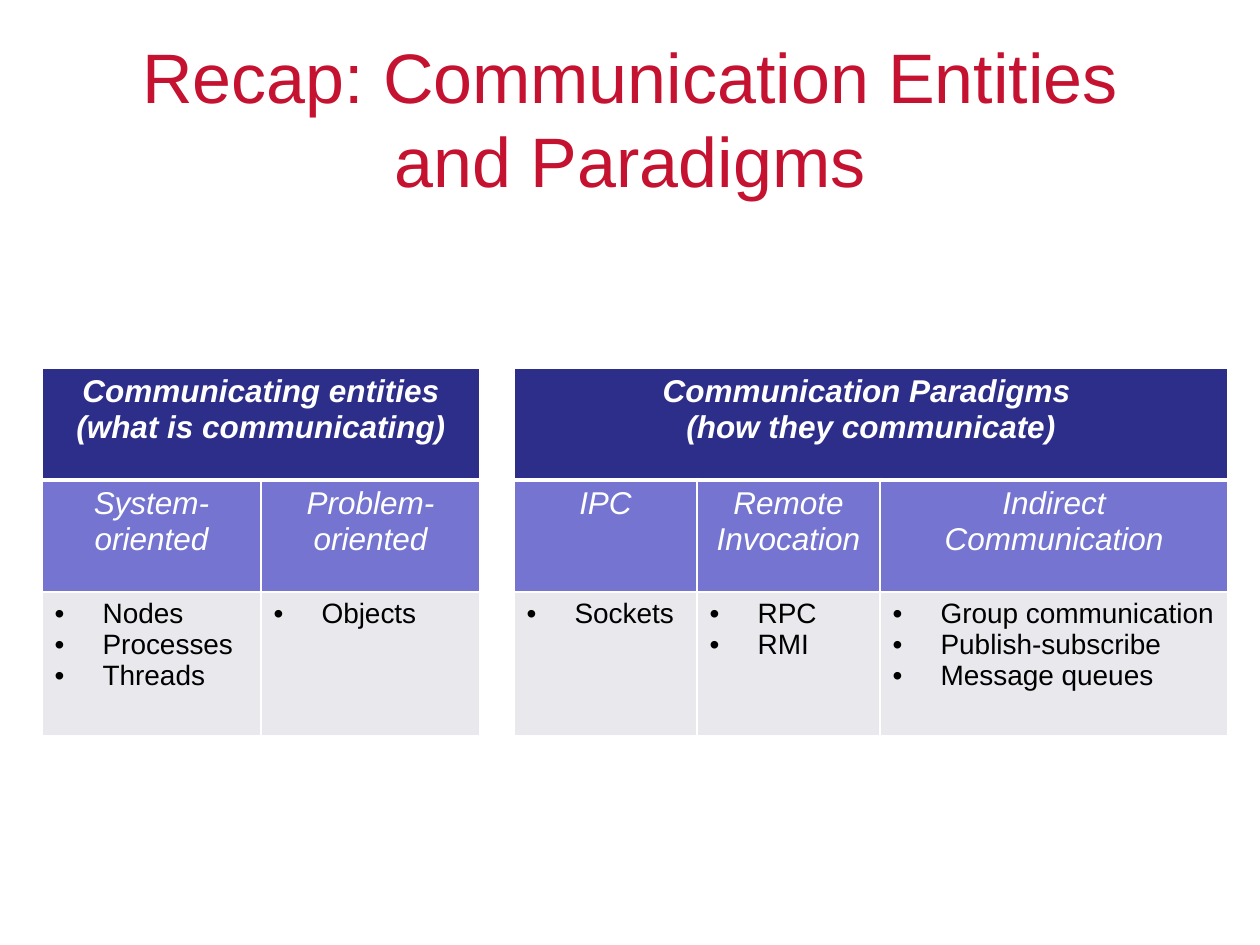
from lxml import etree
from pptx import Presentation, util as u
from pptx.dml.color import RGBColor
from pptx.enum import text
from pptx.oxml import ns

SCALE = 914400 / 126
RED, NAVY, LILAC = "C41230", "2D2D8A", "7575D1"
GREY, WHITE, BLACK = "E8E8ED", "FFFFFF", "000000"
ROWS = (112, 112, 144)
TOP = 368
INDENT = 48


def px(n):
    return u.Emu(round(n * SCALE))


def color(code):
    return RGBColor.from_string(code)


def sub(parent, tag, **attrs):
    node = etree.SubElement(parent, ns.qn(tag))
    for key, val in attrs.items():
        node.set(key, str(val))
    return node


def write(frame, lines, size=18, ink=WHITE, bold=False, slant=False,
          bullet=False, gap=None):
    """Fill a text frame, one paragraph a line."""
    frame.word_wrap = True
    for i, line in enumerate(lines):
        para = frame.paragraphs[0] if i == 0 else frame.add_paragraph()
        if bullet:
            props = para._p.get_or_add_pPr()
            props.set("marL", str(px(INDENT)))
            props.set("indent", str(-px(INDENT)))
            sub(props, "a:buFont", typeface="Arial")
            sub(props, "a:buChar", char="•")
        else:
            para.alignment = text.PP_ALIGN.CENTER
        if gap:
            para.line_spacing = u.Pt(gap)
        para.text = line
        for run in para.runs:
            font = run.font
            font.name, font.size = "Arial", u.Pt(size)
            font.bold, font.italic = bold, slant
            font.color.rgb = color(ink)


def border(cell, row):
    """Draw white edges, thick between the head row and the next."""
    props = cell._tc.get_or_add_tcPr()
    thick = {0: "B", 1: "T"}.get(row)
    for side in "LRTB":
        width = u.Pt(3 if side == thick else 1)
        line = sub(props, f"a:ln{side}", w=int(width))
        sub(sub(line, "a:solidFill"), "a:srgbClr", val=WHITE)


def title(slide, line):
    box = slide.shapes.add_textbox(px(63), px(39), px(1134), px(157))
    box.text_frame.vertical_anchor = text.MSO_ANCHOR.MIDDLE
    write(box.text_frame, [line], size=40, ink=RED, gap=48)


def grid(slide, left, widths, head, kinds, items):
    """Add a table with a merged head, a row of kinds and bullet lists."""
    shape = slide.shapes.add_table(len(ROWS), len(widths), px(left), px(TOP),
                                   px(sum(widths)), px(sum(ROWS)))
    table = shape.table
    table.first_row = table.horz_banding = False
    for col, width in zip(table.columns, widths):
        col.width = px(width)
    for r, (height, fill) in enumerate(zip(ROWS, (NAVY, LILAC, GREY))):
        table.rows[r].height = px(height)
        for cell in table.rows[r].cells:
            border(cell, r)
            cell.fill.solid()
            cell.fill.fore_color.rgb = color(fill)

    first = table.cell(0, 0)
    first.merge(table.cell(0, len(widths) - 1))
    write(first.text_frame, head, bold=True, slant=True)
    for c, (kind, names) in enumerate(zip(kinds, items)):
        write(table.cell(1, c).text_frame, [kind], slant=True)
        write(table.cell(2, c).text_frame, names, size=16, ink=BLACK,
              bullet=True)


def main():
    deck = Presentation()
    deck.slide_width, deck.slide_height = px(1260), px(945)
    slide = deck.slides.add_slide(deck.slide_layouts[6])
    title(slide, "Recap: Communication Entities and Paradigms")

    # What is communicating
    grid(slide, 42, (219, 219),
         ["Communicating entities", "(what is communicating)"],
         ["System-oriented", "Problem-oriented"],
         [["Nodes", "Processes", "Threads"], ["Objects"]])

    # How they communicate
    grid(slide, 514, (183, 183, 348),
         ["Communication Paradigms \v(how they communicate)"],
         ["IPC", "Remote Invocation", "Indirect Communication"],
         [["Sockets"], ["RPC", "RMI"],
          ["Group communication", "Publish-subscribe", "Message queues"]])

    deck.save("out.pptx")


if __name__ == "__main__":
    main()
